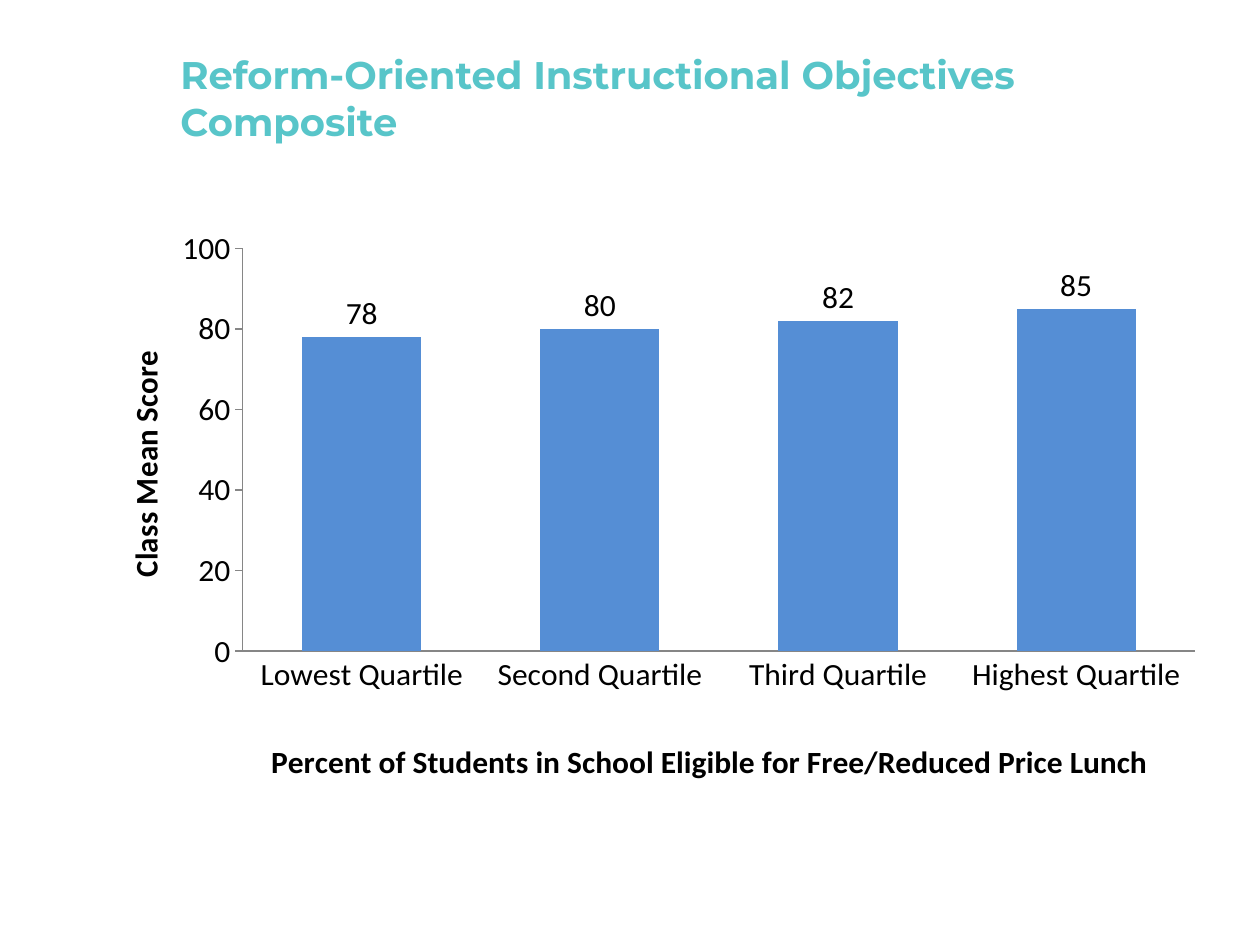
import pptx
import pptx.chart.data
import pptx.dml.color
import pptx.enum.chart
import pptx.enum.text
import pptx.oxml
import pptx.oxml.ns
import pptx.util

Pt = pptx.util.Pt
HUES = {"title": "58C5C9", "bar": "558ED5", "text": "000000", "axis": "868686"}
SCORES = {"Lowest Quartile": 78, "Second Quartile": 80,
          "Third Quartile": 82, "Highest Quartile": 85}


def hue(name):
    return pptx.dml.color.RGBColor.from_string(HUES[name])


def style(font, face, size, color, bold=False):
    font.name, font.size, font.bold = face, Pt(size), bold
    font.color.rgb = hue(color)


def place(node, index, inner=False, **spots):
    """Fix the layout of a plot area or title, as shares of the chart."""
    for old in node.findall(pptx.oxml.ns.qn("c:layout")):
        node.remove(old)
    parts = '<c:layoutTarget val="inner"/>' if inner else ""
    parts += '<c:xMode val="edge"/><c:yMode val="edge"/>'
    parts += "".join(f'<c:{key} val="{val}"/>' for key, val in spots.items())
    node.insert(index, pptx.oxml.parse_xml(
        f'<c:layout {pptx.oxml.ns.nsdecls("c")}>'
        f"<c:manualLayout>{parts}</c:manualLayout></c:layout>"))


def add_title(slide, text):
    box = slide.shapes.add_textbox(Pt(96), Pt(21.6), Pt(588), Pt(68.4))
    frame = box.text_frame
    frame.word_wrap = True
    frame.vertical_anchor = pptx.enum.text.MSO_ANCHOR.MIDDLE
    line = frame.paragraphs[0]
    line.text = text
    style(line.font, "Montserrat", 22, "title", True)


def set_axis(axis, text, tick, x, y):
    axis.has_major_gridlines = False
    axis.major_tick_mark = tick
    axis.minor_tick_mark = pptx.enum.chart.XL_TICK_MARK.NONE
    axis.format.line.color.rgb = hue("axis")
    axis.format.line.width = Pt(0.75)
    title = axis.axis_title
    line = title.text_frame.paragraphs[0]
    line.text = text
    style(line.font, "Calibri", 18, "text", True)
    place(title._element, 1, x=x, y=y)


def add_chart(slide):
    data = pptx.chart.data.CategoryChartData()
    data.categories = list(SCORES)
    data.add_series("Series 1", list(SCORES.values()))
    chart = slide.shapes.add_chart(
        pptx.enum.chart.XL_CHART_TYPE.COLUMN_CLUSTERED,
        Pt(48), Pt(126), Pt(648), Pt(326), data).chart
    chart.has_legend = chart.has_title = False
    style(chart.font, "Calibri", 18, "text")
    place(chart._chartSpace.chart.plotArea, 0, True, x=0.14, y=0.05, w=0.84, h=0.72)

    # Axes
    ticks = pptx.enum.chart.XL_TICK_MARK
    set_axis(chart.category_axis,
             "Percent of Students in School Eligible for Free/Reduced Price Lunch",
             ticks.NONE, 0.16, 0.92)
    score = chart.value_axis
    set_axis(score, "Class Mean Score", ticks.OUTSIDE, 0.03, 0.23)
    score.minimum_scale, score.maximum_scale, score.major_unit = 0, 100, 20

    # Bars and their values
    plot = chart.plots[0]
    plot.gap_width = 100
    plot.vary_by_categories = False
    fill = plot.series[0].format.fill
    fill.solid()
    fill.fore_color.rgb = hue("bar")
    plot.has_data_labels = True
    plot.data_labels.show_value = True
    plot.data_labels.position = pptx.enum.chart.XL_LABEL_POSITION.OUTSIDE_END


def main():
    deck = pptx.Presentation()
    deck.slide_width, deck.slide_height = Pt(720), Pt(540)
    slide = deck.slides.add_slide(deck.slide_layouts[6])
    add_title(slide, "Reform-Oriented Instructional Objectives Composite")
    add_chart(slide)
    deck.save("out.pptx")


if __name__ == "__main__":
    main()
